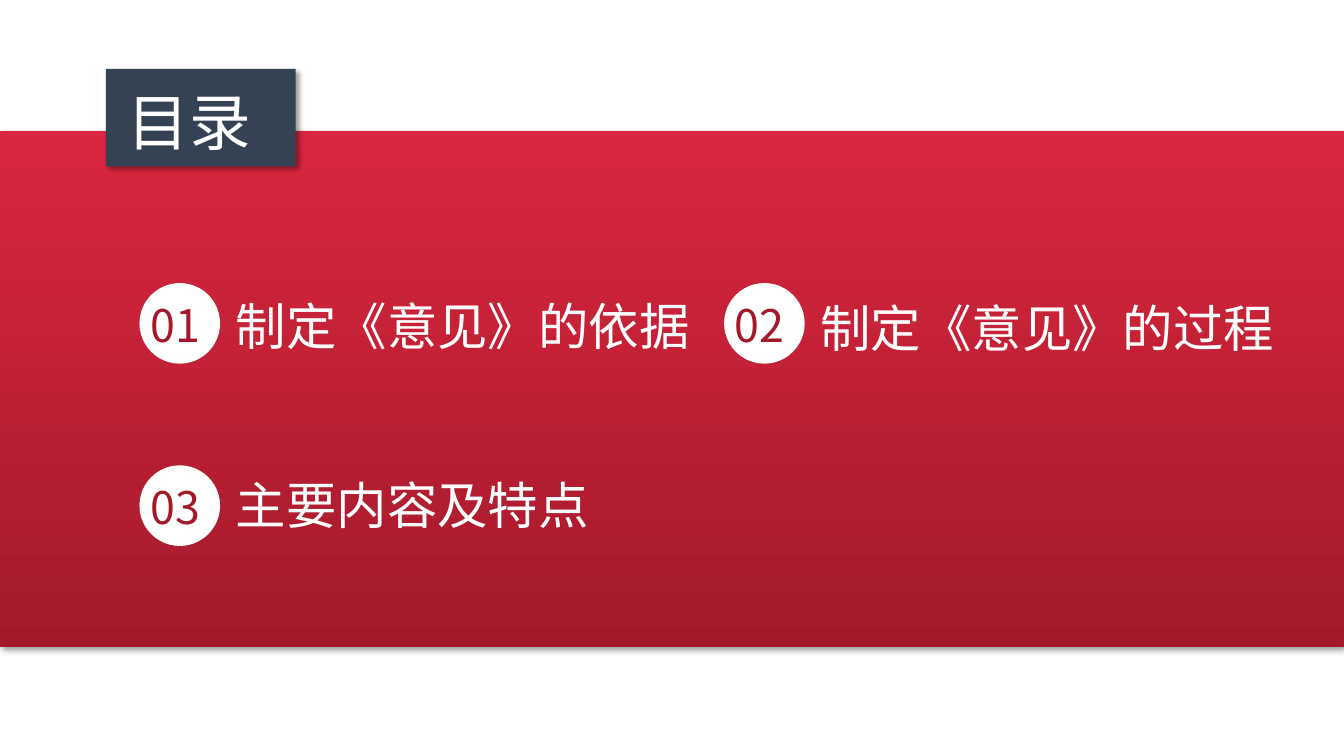
from dataclasses import dataclass

from lxml import etree
from pptx import Presentation
from pptx.dml.color import RGBColor
from pptx.enum.shapes import MSO_SHAPE
from pptx.enum.text import MSO_AUTO_SIZE, PP_ALIGN
from pptx.oxml.ns import qn
from pptx.util import Inches, Pt

RECTANGLE, OVAL = MSO_SHAPE.RECTANGLE, MSO_SHAPE.OVAL
LEFT, JUSTIFY = PP_ALIGN.LEFT, PP_ALIGN.JUSTIFY
GROW = MSO_AUTO_SIZE.SHAPE_TO_FIT_TEXT
COLUMNS, ROWS = 16, 9


@dataclass(frozen=True)
class Theme:
    font: str = "Noto Sans CJK SC"
    white: str = "FFFFFF"
    slate: str = "354254"
    red: str = "DA273F"
    dark_red: str = "A3192C"
    shadow: str = "000000"
    title_size: int = 44
    label_size: int = 36
    number_size: int = 32


class SlideBuilder:
    """Places elements by column and row on a 16 by 9 grid."""

    def __init__(self, deck, theme):
        self.theme = theme
        self.slide = deck.slides.add_slide(deck.slide_layouts[6])
        self.column = deck.slide_width / COLUMNS
        self.row = deck.slide_height / ROWS

    def place(self, left, top, width, height):
        return (round(left * self.column), round(top * self.row),
                round(width * self.column), round(height * self.row))

    def shape(self, kind, area, *colors, shadow=False):
        """One colour gives a solid fill, two a gradient from top to bottom."""
        shape = self.slide.shapes.add_shape(kind, *self.place(*area))
        shape.line.fill.background()
        if len(colors) == 1:
            shape.fill.solid()
            shape.fill.fore_color.rgb = RGBColor.from_string(colors[0])
        else:
            shape.fill.gradient()
            shape.fill.gradient_angle = 270
            for stop, color in zip(shape.fill.gradient_stops, colors):
                stop.color.rgb = RGBColor.from_string(color)
        shape.shadow.inherit = False
        if shadow:
            self.drop_shadow(shape)

    def drop_shadow(self, shape):
        effects = shape._element.spPr.find(qn("a:effectLst"))
        outer = etree.SubElement(
            effects, qn("a:outerShdw"), blurRad=str(Pt(4)), dist=str(Pt(3)),
            dir=str(45 * 60000), algn="tl", rotWithShape="0")
        color = etree.SubElement(outer, qn("a:srgbClr"), val=self.theme.shadow)
        etree.SubElement(color, qn("a:alpha"), val="40000")

    def text(self, words, area, size, color, align=LEFT):
        box = self.slide.shapes.add_textbox(*self.place(*area))
        frame = box.text_frame
        frame.word_wrap = True
        frame.auto_size = GROW
        para = frame.paragraphs[0]
        para.text = words
        para.alignment = align
        para.font.name = self.theme.font
        para.font.size = Pt(size)
        para.font.color.rgb = RGBColor.from_string(color)
        defaults = para._p.pPr.find(qn("a:defRPr"))
        latin = defaults.find(qn("a:latin"))
        east_asian = etree.Element(qn("a:ea"), typeface=self.theme.font)
        latin.addnext(east_asian)

    def entry(self, number, label, left, top, label_drop, label_width):
        theme = self.theme
        self.shape(OVAL, (left, top, 0.96, 0.96), theme.white)
        self.text(f"{number:02}", (left + 0.01, top + 0.11, 0.95, 0.77),
                  theme.number_size, theme.dark_red, JUSTIFY)
        self.text(label, (left + 1.03, top + label_drop, label_width, 0.85),
                  theme.label_size, theme.white)


def main():
    deck = Presentation()
    deck.slide_width, deck.slide_height = Inches(13.33), Inches(7.5)
    theme = Theme()
    page = SlideBuilder(deck, theme)

    page.shape(RECTANGLE, (0, 1.56, COLUMNS, 6.14),
               theme.red, theme.dark_red, shadow=True)
    page.shape(RECTANGLE, (1.26, 0.82, 2.26, 1.16), theme.slate, shadow=True)

    entries = [
        ("制定《意见》的依据", 0.08, 6.16),
        ("制定《意见》的过程", 0.11, 6.53),
        ("主要内容及特点", 0.04, 5.59),
    ]
    for index, (label, label_drop, label_width) in enumerate(entries):
        row, column = divmod(index, 2)
        page.entry(index + 1, label, 1.66 + 6.96 * column, 3.37 + 2.17 * row,
                   label_drop, label_width)

    page.text("目录", (1.4, 0.94, 1.94, 1.01),
              theme.title_size, theme.white, JUSTIFY)
    deck.save("out.pptx")


if __name__ == "__main__":
    main()
